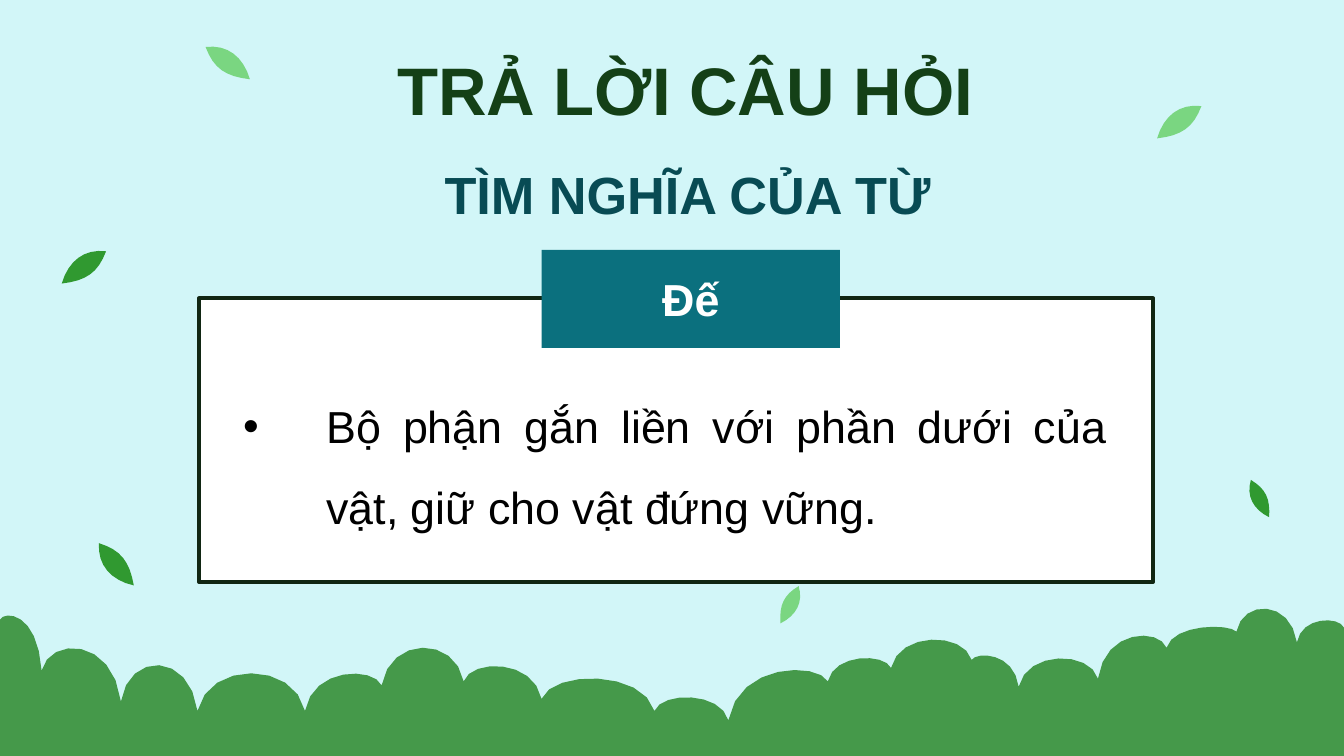
import dataclasses

import lxml.etree
import pptx
import pptx.dml.color
import pptx.enum.shapes
import pptx.enum.text
import pptx.oxml.ns
import pptx.util


@dataclasses.dataclass(frozen=True)
class Theme:
    font: str = "Arial"
    sky: str = "D2F6F8"
    bush: str = "45994A"
    dark_leaf: str = "309930"
    light_leaf: str = "7AD681"
    title: str = "144017"
    subtitle: str = "084B54"
    frame: str = "112613"
    label: str = "0B707E"
    white: str = "FFFFFF"
    black: str = "000000"
    title_size: int = 36
    subtitle_size: int = 28
    body_size: int = 24


THEME = Theme()
RGB = pptx.dml.color.RGBColor.from_string
ALIGN = pptx.enum.text.PP_ALIGN
ANCHOR = pptx.enum.text.MSO_ANCHOR
FIT = pptx.enum.text.MSO_AUTO_SIZE
RECTANGLE = pptx.enum.shapes.MSO_SHAPE.RECTANGLE

deck = pptx.Presentation()
deck.slide_width = pptx.util.Inches(10)
deck.slide_height = pptx.util.Inches(5.625)
column = deck.slide_width // 100
row = column

page = deck.slides.add_slide(deck.slide_layouts[5])
page.background.fill.solid()
page.background.fill.fore_color.rgb = RGB(THEME.sky)


def write(box, text, size, color, bold=True, align=ALIGN.CENTER, anchor=ANCHOR.TOP, fit=FIT.NONE):
    frame = box.text_frame
    frame.word_wrap = True
    frame.auto_size = fit
    frame.vertical_anchor = anchor
    para = frame.paragraphs[0]
    para.alignment = align
    span = para.add_run()
    span.text = text
    span.font.name = THEME.font
    span.font.size = pptx.util.Pt(size)
    span.font.bold = bold
    span.font.color.rgb = RGB(color)
    return para


def draw_curves(curves, color, corners=(), steps=8):
    """Fill the outline made by cubic curves and further corners, in columns and rows."""
    points = [curves[0][0]]
    for curve in curves:
        for step in range(1, steps + 1):
            t = step / steps
            weights = ((1 - t) ** 3, 3 * t * (1 - t) ** 2, 3 * t * t * (1 - t), t ** 3)
            points.append(tuple(
                sum(weight * value for weight, value in zip(weights, axis)) for axis in zip(*curve)))
    points = [(x * column, y * row) for x, y in [*points, *corners]]
    builder = page.shapes.build_freeform(*points[0])
    builder.add_line_segments(points[1:], close=True)
    outline = builder.convert_to_shape()
    outline.shadow.inherit = False
    outline.fill.solid()
    outline.fill.fore_color.rgb = RGB(color)
    outline.line.fill.background()
    return outline


# Bushes: each scallop is the valley where it ends and the height of its crest
valley = (0, 46.1)
scallops = [
    (3.1, 49.9, 46.1), (9, 52.2, 48.3), (14.7, 52.9, 49.5), (22.7, 52.9, 50.1),
    (28.4, 51, 50.2), (34.5, 50.7, 48.2), (40.3, 52, 49.6), (48.7, 52.9, 50.5),
    (54.2, 53.6, 51.9), (61.6, 50.7, 50), (66.3, 49.7, 49), (72.3, 49.1, 47.6),
    (75.8, 51.1, 48.9), (81.7, 50.5, 49), (86.8, 48.2, 47.4), (92, 47, 46.7),
    (96.5, 47.8, 45.3), (100, 46.7, 46.2),
]
bush_curves = []
for x, y, crest in scallops:
    lean = (x - valley[0]) / 10
    pull = (4 * crest - (valley[1] + y) / 2) / 3
    bush_curves.append((valley, (valley[0] + lean, pull), (x - lean, pull), (x, y)))
    valley = (x, y)
draw_curves(bush_curves, THEME.bush, corners=[(100, 56.25), (0, 56.25)])

# Leaves: one outline, moved, scaled, mirrored and turned
leaf_width = 3.3
tip, stem = (leaf_width, 0), (0, 2.4)
leaf_curves = [
    (tip, (1.7, -0.2), (0.5, 0.7), stem),
    (stem, (1.8, 2.2), (2.7, 1.6), tip),
]
leaves = [
    (4.6, 18.7, 3.3, 0, False, THEME.dark_leaf),
    (15.3, 3.5, 3.3, 0, True, THEME.light_leaf),
    (7, 40.8, 3.3, 266.5, False, THEME.dark_leaf),
    (92.5, 36.2, 2.5, 279.9, False, THEME.dark_leaf),
    (57.5, 44.1, 2.5, 80.1, True, THEME.light_leaf),
    (86.1, 7.9, 3.3, 0, False, THEME.light_leaf),
]
for left, top, width, turn, mirrored, color in leaves:
    scale = width / leaf_width
    placed = [
        [(left + (leaf_width - x if mirrored else x) * scale, top + y * scale) for x, y in curve]
        for curve in leaf_curves
    ]
    draw_curves(placed, color).rotation = turn

# Title and subtitle
title = page.shapes.title
title.left, title.top = int(18.6 * column), 2 * row
title.width, title.height = int(64.8 * column), int(9.2 * row)
write(title, "TRẢ LỜI CÂU HỎI", THEME.title_size, THEME.title, anchor=ANCHOR.MIDDLE)

subtitle = page.shapes.add_textbox(
    int(5.4 * column), int(11.6 * row), int(91.5 * column), int(5.7 * row))
write(subtitle, "TÌM NGHĨA CỦA TỪ", THEME.subtitle_size, THEME.subtitle, fit=FIT.SHAPE_TO_FIT_TEXT)

# Framed card with the word on its top edge
card = page.shapes.add_shape(
    RECTANGLE, int(14.8 * column), int(22.2 * row), 71 * column, int(21.1 * row))
label = page.shapes.add_shape(
    RECTANGLE, int(40.3 * column), int(18.6 * row), int(22.2 * column), int(7.3 * row))
for box, color in ((card, THEME.white), (label, THEME.label)):
    box.shadow.inherit = False
    box.fill.solid()
    box.fill.fore_color.rgb = RGB(color)
    box.line.fill.background()
card.line.color.rgb = RGB(THEME.frame)
card.line.width = pptx.util.Pt(2)
write(label, "Đế", THEME.body_size, THEME.white, anchor=ANCHOR.MIDDLE)

# Meaning of the word
meaning = page.shapes.add_textbox(
    int(17.1 * column), int(27.2 * row), int(66.2 * column), int(12.4 * row))
para = write(meaning, "Bộ phận gắn liền với phần dưới của vật, giữ cho vật đứng vững.",
             THEME.body_size, THEME.black, bold=False, align=ALIGN.JUSTIFY,
             fit=FIT.SHAPE_TO_FIT_TEXT)
para.line_spacing = 1.5
para.space_after = pptx.util.Pt(6)
properties = para._p.get_or_add_pPr()
indent = int(6.2 * column)
properties.set("marL", str(indent))
properties.set("indent", str(-indent))
qn = pptx.oxml.ns.qn
bullet_color = lxml.etree.SubElement(properties, qn("a:buClr"))
lxml.etree.SubElement(bullet_color, qn("a:srgbClr"), val=THEME.black)
lxml.etree.SubElement(properties, qn("a:buFont"), typeface=THEME.font)
lxml.etree.SubElement(properties, qn("a:buChar"), char="•")

deck.save("out.pptx")
